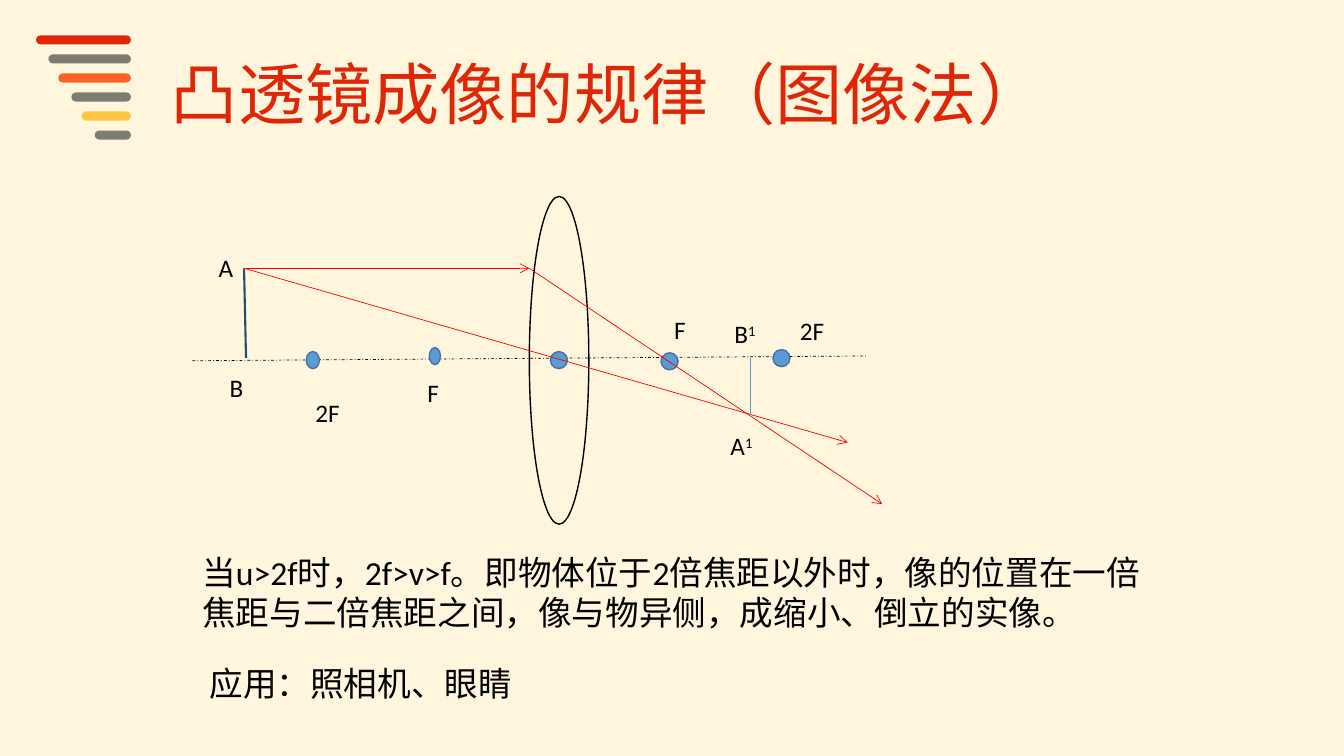
from dataclasses import dataclass

from lxml.etree import SubElement as Sub
from pptx import Presentation
from pptx.dml.color import RGBColor as RGB
from pptx.enum.dml import MSO_LINE as Dash
from pptx.enum.shapes import MSO_CONNECTOR as Conn, MSO_SHAPE as Form
from pptx.enum.text import MSO_ANCHOR as Anchor
from pptx.oxml.ns import qn
from pptx.util import Cm, Pt


@dataclass(frozen=True)
class Theme:
    """Colours, fonts and type sizes of the slide."""
    paper: str = "FFF6DD"
    red: str = "DF2708"
    grey: str = "7C7C70"
    orange: str = "FD6326"
    gold: str = "FEC642"
    ink: str = "000000"
    ray: str = "FF0000"
    navy: str = "1F4E79"
    blue: str = "5B9BD5"
    rim: str = "43739E"
    latin: str = "Calibri"
    asian: str = "Noto Sans CJK SC"
    title: int = 48
    body: int = 24
    label: int = 18


THEME = Theme()


def apply(item, **vals):
    """Set each given attribute on the item."""
    for name, val in vals.items():
        setattr(item, name, val)


def add_form(slide, kind, box, fill=None, line=None):
    """Add a preset shape with optional fill and outline colours."""
    shape = slide.shapes.add_shape(kind, *map(Cm, box))
    shape.shadow.inherit = False
    if fill:
        shape.fill.solid()
        shape.fill.fore_color.rgb = RGB.from_string(fill)
    else:
        shape.fill.background()
    if line:
        shape.line.color.rgb = RGB.from_string(line)
        shape.line.width = Pt(1)
    else:
        shape.line.fill.background()
    return shape


def add_line(slide, ends, hue, width=0.5, dash=None, arrow=False):
    """Add a straight line, dashed or with an open arrowhead if asked."""
    link = slide.shapes.add_connector(Conn.STRAIGHT, *map(Cm, ends))
    link.line.color.rgb = RGB.from_string(hue)
    apply(link.line, width=Pt(width), dash_style=dash)
    if arrow:
        Sub(link.line._get_or_add_ln(), qn("a:tailEnd"), type="arrow")
    Sub(link._element.spPr, qn("a:effectLst"))


def add_text(slide, box, text, size, hue=THEME.ink, face=THEME.latin, sup=""):
    """Add a text box, with a raised ending if given."""
    frame = slide.shapes.add_textbox(*map(Cm, box)).text_frame
    apply(frame, word_wrap=True, vertical_anchor=Anchor.MIDDLE)
    para = frame.paragraphs[0]
    for part in filter(None, (text, sup)):
        run = para.add_run()
        run.text = part
        apply(run.font, name=face, size=Pt(size))
        run.font.color.rgb = RGB.from_string(hue)
        props = run._r.get_or_add_rPr()
        if face == THEME.asian:
            Sub(props, qn("a:ea"), typeface=face)
        if part is sup:
            props.set("baseline", "30000")


def add_bars(slide):
    """Add the right-aligned stack of shrinking bars."""
    right, top, step, high = 3.3, 0.89, 0.48, 0.23
    hues = (THEME.red, THEME.grey, THEME.orange,
            THEME.grey, THEME.gold, THEME.grey)
    wides = (2.39, 2.08, 1.83, 1.5, 1.24, 0.91)
    for row, (hue, wide) in enumerate(zip(hues, wides)):
        box = (right - wide, top + row * step, wide, high)
        bar = add_form(slide, Form.ROUNDED_RECTANGLE, box, hue)
        bar.adjustments[0] = 0.5


def add_optics(slide):
    """Add the axis, lens, object, focal points, rays and image."""
    add_line(slide, (4.85, 9.09, 21.82, 8.97), THEME.ink, dash=Dash.DASH_DOT)
    add_form(slide, Form.OVAL, (13.34, 4.95, 1.5, 8.26), line=THEME.ink)
    add_line(slide, (6.15, 6.76, 6.2, 9.02), THEME.navy, 1.5)
    for left, top, wide in ((7.72, 8.86, 0.33), (10.82, 8.76, 0.28),
                            (13.87, 8.86, 0.43), (16.66, 8.89, 0.43),
                            (19.48, 8.81, 0.43)):
        add_form(slide, Form.OVAL, (left, top, wide, 0.43),
                 THEME.blue, THEME.rim)
    for ends in ((6.2, 6.76, 13.34, 6.76), (13.34, 6.76, 22.23, 12.7),
                 (6.15, 6.76, 21.36, 11.15)):
        add_line(slide, ends, THEME.ray, arrow=True)
    add_line(slide, (18.9, 10.46, 18.9, 9.02), THEME.blue)


def add_labels(slide):
    """Add the letters that name the points."""
    for text, sup, left, top, wide in (
            ("A", "", 5.26, 6.22, 0.66), ("B", "", 5.54, 9.25, 0.61),
            ("A", "1", 18.16, 10.72, 1.32), ("B", "1", 18.26, 7.9, 1.24),
            ("F", "", 10.52, 9.37, 0.91), ("F", "", 16.74, 7.8, 0.91),
            ("2F", "", 19.91, 7.82, 1.19), ("2F", "", 7.7, 9.88, 1.19)):
        add_text(slide, (left, top, wide, 1.02), text, THEME.label, sup=sup)


def main():
    """Build the slide and save it."""
    deck = Presentation()
    apply(deck, slide_width=Cm(33.87), slide_height=Cm(19.05))
    slide = deck.slides.add_slide(deck.slide_layouts[6])
    slide.background.fill.solid()
    slide.background.fill.fore_color.rgb = RGB.from_string(THEME.paper)
    add_bars(slide)
    add_text(slide, (4.06, 1.19, 22.96, 2.31), "凸透镜成像的规律（图像法）",
             THEME.title, THEME.red, THEME.asian)
    add_optics(slide)
    add_labels(slide)
    add_text(slide, (4.85, 13.77, 24.33, 2.31),
             "当u>2f时，2f>v>f。即物体位于2倍焦距以外时，像的位置在"
             "一倍焦距与二倍焦距之间，像与物异侧，成缩小、倒立的实像。",
             THEME.body)
    add_text(slide, (5.03, 16.59, 9.04, 1.27), "应用：照相机、眼睛", THEME.body)
    deck.save("out.pptx")


if __name__ == "__main__":
    main()
